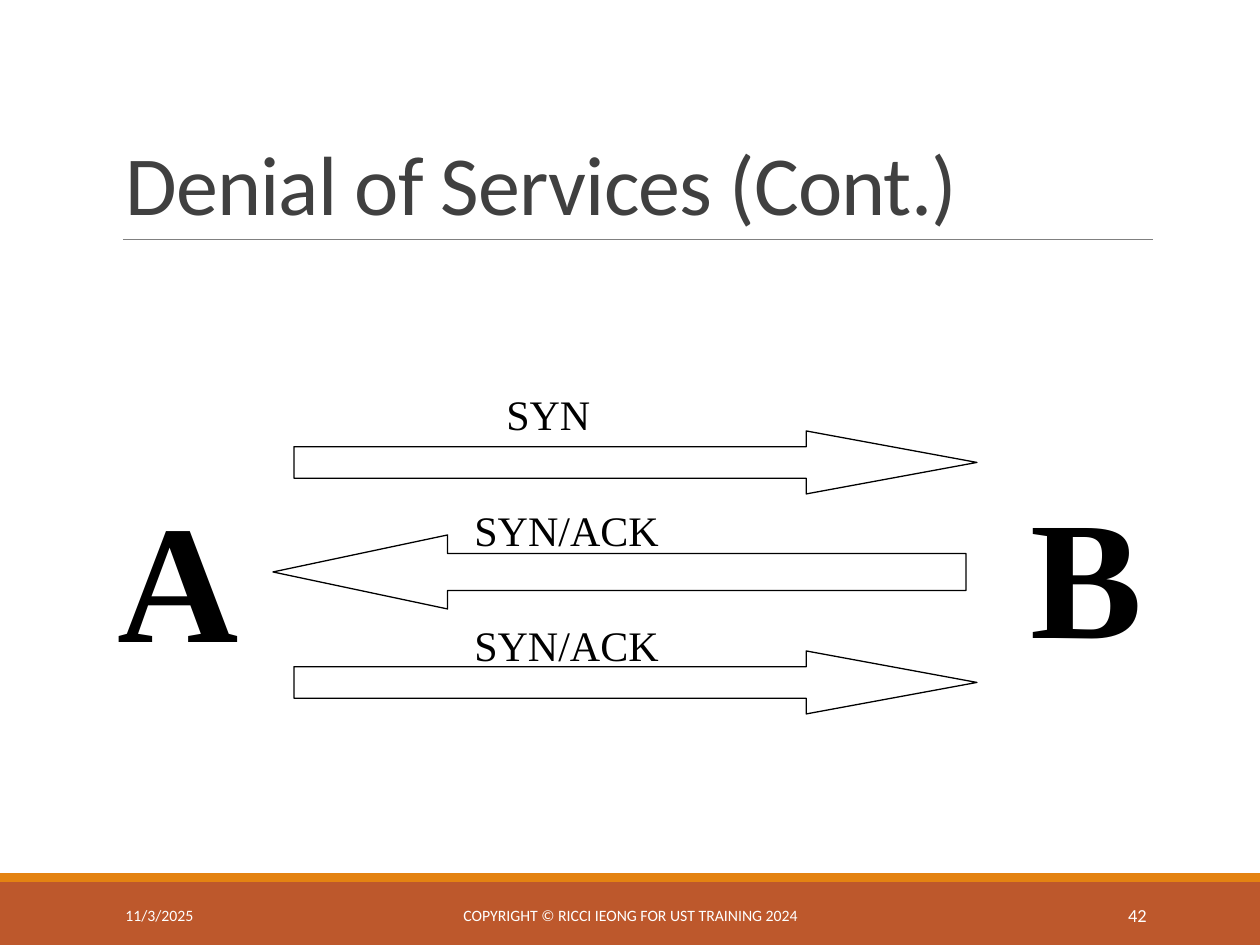
from dataclasses import dataclass

from pptx import Presentation
from pptx.dml.color import RGBColor
from pptx.enum.shapes import MSO_CONNECTOR, MSO_SHAPE
from pptx.enum.text import MSO_ANCHOR, MSO_AUTO_SIZE, PP_ALIGN
from pptx.oxml.ns import qn
from pptx.util import Pt

SCALE = 914400 / 126
WIDTH, HEIGHT = 1260, 945

WHITE = RGBColor(0xFF, 0xFF, 0xFF)
BLACK = RGBColor(0x00, 0x00, 0x00)
GREY = RGBColor(0x80, 0x80, 0x80)
DARK = RGBColor(0x40, 0x40, 0x40)
RUST = RGBColor(0xBD, 0x58, 0x2C)
ORANGE = RGBColor(0xE4, 0x83, 0x12)

RECT = MSO_SHAPE.RECTANGLE
EAST, WEST = MSO_SHAPE.RIGHT_ARROW, MSO_SHAPE.LEFT_ARROW
LEFT, MID, RIGHT = PP_ALIGN.LEFT, PP_ALIGN.CENTER, PP_ALIGN.RIGHT
TOP, CENTRE, BOTTOM = MSO_ANCHOR.TOP, MSO_ANCHOR.MIDDLE, MSO_ANCHOR.BOTTOM

TITLE = {"name": "Calibri", "size": Pt(48)}
FOOT = {"name": "Calibri", "size": Pt(9)}
PAGE = {"name": "Calibri", "size": Pt(10.5)}
LABEL = {"name": "Times New Roman", "size": Pt(24)}
HOST = {"name": "Times New Roman", "size": Pt(96), "bold": True}


@dataclass
class Box:
    left: int
    top: int
    width: int
    height: int


@dataclass
class Text:
    words: str
    box: Box
    font: dict
    color: RGBColor = BLACK
    align: PP_ALIGN = LEFT
    anchor: MSO_ANCHOR = TOP
    inset: int = 6


@dataclass
class Arrow:
    kind: MSO_SHAPE
    box: Box
    head: float


BANDS = [(Box(0, 882, WIDTH, 63), RUST), (Box(0, 873, WIDTH, 9), ORANGE)]
ARROWS = [
    Arrow(EAST, Box(294, 431, 683, 63), 2.71),
    Arrow(WEST, Box(273, 535, 693, 74), 2.36),
    Arrow(EAST, Box(294, 651, 683, 63), 2.71),
]
HEADING = Text("Denial of Services (Cont.)", Box(113, 39, 1040, 200),
               TITLE, DARK, anchor=BOTTOM)
TEXTS = [
    Text("A", Box(105, 451, 147, 214), HOST, inset=24),
    Text("B", Box(1018, 447, 147, 214), HOST, inset=24),
    Text("SYN", Box(494, 378, 126, 63), LABEL, inset=11),
    Text("SYN/ACK", Box(462, 494, 357, 63), LABEL, inset=11),
    Text("SYN/ACK", Box(462, 609, 242, 63), LABEL, inset=11),
    Text("11/3/2025", Box(113, 890, 256, 50), FOOT, WHITE, anchor=CENTRE),
    Text("COPYRIGHT © RICCI IEONG FOR UST TRAINING 2024",
         Box(381, 890, 499, 50), FOOT, WHITE, MID, CENTRE),
    Text("42", Box(1023, 890, 136, 50), PAGE, WHITE, RIGHT, CENTRE),
]


def emu(px: int) -> int:
    return round(px * SCALE)


def place(box: Box) -> list[int]:
    return [emu(px) for px in (box.left, box.top, box.width, box.height)]


def write(shape, text: Text) -> None:
    frame = shape.text_frame
    form = {"word_wrap": True, "auto_size": MSO_AUTO_SIZE.NONE,
            "vertical_anchor": text.anchor, "margin_top": emu(text.inset)}
    for key, value in form.items():
        setattr(frame, key, value)
    para = frame.paragraphs[0]
    para.alignment = text.align
    run = para.add_run()
    run.text = text.words
    for key, value in text.font.items():
        setattr(run.font, key, value)
    run.font.color.rgb = text.color


def draw_title(slide, text: Text) -> None:
    shape = slide.shapes.title
    sides = ("left", "top", "width", "height")
    for key, value in zip(sides, place(text.box)):
        setattr(shape, key, value)
    write(shape, text)
    para = shape.text_frame.paragraphs[0]
    para.line_spacing = 0.85
    para.runs[0].font._element.set("spc", "-50")


def draw_text(slide, text: Text) -> None:
    write(slide.shapes.add_textbox(*place(text.box)), text)


def draw_shape(slide, kind: MSO_SHAPE, box: Box, fill: RGBColor):
    shape = slide.shapes.add_shape(kind, *place(box))
    shape.shadow.inherit = False
    shape.fill.solid()
    shape.fill.fore_color.rgb = fill
    shape.line.fill.background()
    return shape


def draw_arrow(slide, arrow: Arrow) -> None:
    shape = draw_shape(slide, arrow.kind, arrow.box, WHITE)
    shape.adjustments[0] = 0.5
    shape.adjustments[1] = arrow.head
    shape.line.color.rgb = BLACK
    shape.line.width = Pt(0.75)


def draw_rule(slide, left: int, right: int, top: int) -> None:
    ends = [emu(px) for px in (left, top, right, top)]
    rule = slide.shapes.add_connector(MSO_CONNECTOR.STRAIGHT, *ends)
    rule.line.color.rgb = GREY
    rule.line.width = Pt(0.5)
    props = rule._element.spPr
    props.append(props.makeelement(qn("a:effectLst"), {}))


def main() -> None:
    deck = Presentation()
    deck.slide_width, deck.slide_height = emu(WIDTH), emu(HEIGHT)
    slide = deck.slides.add_slide(deck.slide_layouts[5])
    for box, fill in BANDS:
        draw_shape(slide, RECT, box, fill)
    draw_rule(slide, 123, 1153, 239)
    draw_title(slide, HEADING)
    for arrow in ARROWS:
        draw_arrow(slide, arrow)
    for text in TEXTS:
        draw_text(slide, text)
    deck.save("out.pptx")


if __name__ == "__main__":
    main()
